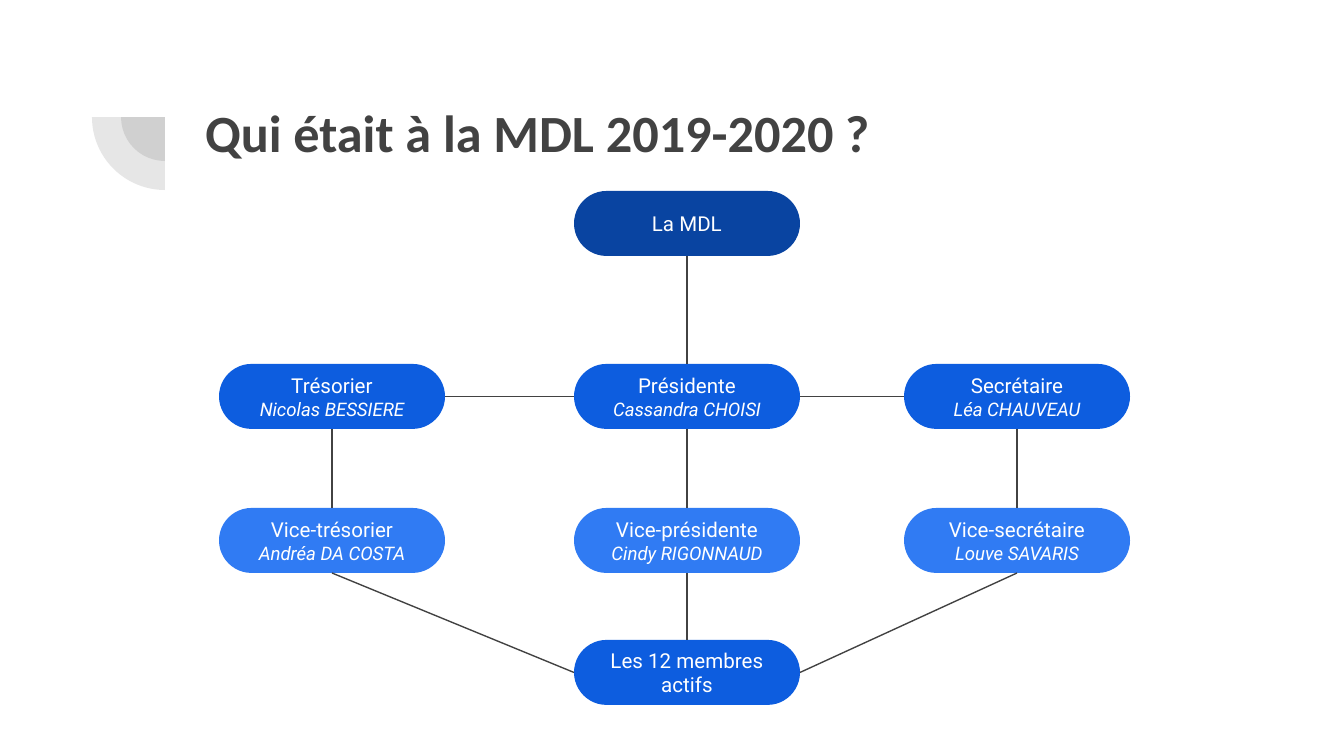
"""Builds the organisation chart slide of the 2019-2020 MDL."""
from typing import NamedTuple

from pptx import Presentation
from pptx.dml.color import RGBColor
from pptx.enum.shapes import MSO_CONNECTOR as Link, MSO_SHAPE as Kind
from pptx.enum.text import MSO_ANCHOR as Anchor, PP_ALIGN as Align
from pptx.oxml.ns import qn
from pptx.util import Emu, Pt
from lxml.etree import SubElement

SCALE = 914400 / 134.4
WIDE, HIGH = 226, 65
LEFT, MID, RIGHT = 219, 574, 904
GREY, WHITE = "424242", "FFFFFF"
DARK, BLUE, LIGHT = "0944A1", "0D5DDF", "307BF3"
TOP, WEST, BASE, EAST = range(4)


class Post(NamedTuple):
    key: str
    x: int
    y: int
    fill: str
    role: str
    name: str = ""


class Tie(NamedTuple):
    start: str
    side: int
    end: str
    into: int


POSTS = [
    Post("mdl", MID, 191, DARK, "La MDL"),
    Post("cash", LEFT, 364, BLUE, "Trésorier", "Nicolas BESSIERE"),
    Post("head", MID, 364, BLUE, "Présidente", "Cassandra CHOISI"),
    Post("pen", RIGHT, 364, BLUE, "Secrétaire", "Léa CHAUVEAU"),
    Post("cash2", LEFT, 508, LIGHT, "Vice-trésorier", "Andréa DA COSTA"),
    Post("head2", MID, 508, LIGHT, "Vice-présidente", "Cindy RIGONNAUD"),
    Post("pen2", RIGHT, 508, LIGHT, "Vice-secrétaire", "Louve SAVARIS"),
    Post("crew", MID, 640, BLUE, "Les 12 membres actifs"),
]

TIES = [
    Tie("mdl", BASE, "head", TOP),
    Tie("head", EAST, "pen", WEST),
    Tie("head", WEST, "cash", EAST),
    Tie("cash", BASE, "cash2", TOP),
    Tie("head", BASE, "head2", TOP),
    Tie("pen", BASE, "pen2", TOP),
    Tie("cash2", BASE, "crew", WEST),
    Tie("head2", BASE, "crew", TOP),
    Tie("pen2", BASE, "crew", EAST),
]


def px(*sizes: int) -> list[Emu]:
    """Turn pixels into EMU."""
    return [Emu(round(size * SCALE)) for size in sizes]


def tint(code: str) -> RGBColor:
    """Turn a hex string into a colour."""
    return RGBColor.from_string(code)


def style(para, size: int, face: str, code: str, bold: bool = False, slant: bool = False) -> None:
    """Format every run of a paragraph."""
    for run in para.runs:
        font = run.font
        font.size, font.name, font.bold, font.italic = Pt(size), face, bold, slant
        font.color.rgb = tint(code)


def inset(frame) -> None:
    """Wrap a text frame and give it equal margins."""
    frame.word_wrap = True
    (frame.margin_left, frame.margin_right,
     frame.margin_top, frame.margin_bottom) = px(13, 13, 13, 13)


def shape(slide, kind: Kind, box: tuple, code: str):
    """Draw a flat shape without outline."""
    item = slide.shapes.add_shape(kind, *px(*box))
    item.shadow.inherit = False
    item.fill.solid()
    item.fill.fore_color.rgb = tint(code)
    item.line.fill.background()
    return item


def pie(slide, radius: int) -> None:
    """Draw a clear quarter disc around the shared corner."""
    box = (165 - radius, 117 - radius, 2 * radius, 2 * radius)
    item = shape(slide, Kind.PIE, box, GREY)
    item.adjustments[0], item.adjustments[1] = 108, 162
    item.rotation = 270
    tone = item.fill._xPr.find(qn("a:solidFill"))[0]
    SubElement(tone, qn("a:alpha"), val="13000")


def title(slide, text: str) -> None:
    """Write the slide title."""
    frame = slide.shapes.add_textbox(*px(192, 87, 1034, 146)).text_frame
    inset(frame)
    frame.text = text
    style(frame.paragraphs[0], 28, "Calibri", GREY, bold=True)


def pill(slide, post: Post):
    """Draw one post with its role and holder."""
    item = shape(slide, Kind.ROUNDED_RECTANGLE, (post.x, post.y, WIDE, HIGH), post.fill)
    item.adjustments[0] = 0.5
    frame = item.text_frame
    inset(frame)
    frame.vertical_anchor = Anchor.MIDDLE
    frame.text = f"{post.role}\n{post.name}" if post.name else post.role
    for row, para in enumerate(frame.paragraphs):
        para.alignment = Align.CENTER
        style(para, 11 - row, "Roboto", WHITE, slant=row == 1)
    return item


def join(slide, tie: Tie, pills: dict) -> None:
    """Draw a line between two posts."""
    line = slide.shapes.add_connector(Link.STRAIGHT, 0, 0, 0, 0)
    line.begin_connect(pills[tie.start], tie.side)
    line.end_connect(pills[tie.end], tie.into)
    line.line.color.rgb = tint(GREY)
    line.line.width = Pt(0.75)
    SubElement(line._element.spPr, qn("a:effectLst"))


def main() -> None:
    """Build and save the slide."""
    deck = Presentation()
    deck.slide_width, deck.slide_height = px(1344, 756)
    slide = deck.slides.add_slide(deck.slide_layouts[6])
    for radius in (44, 73):
        pie(slide, radius)
    title(slide, "Qui était à la MDL 2019-2020 ?")
    pills = {post.key: pill(slide, post) for post in POSTS}
    for tie in TIES:
        join(slide, tie, pills)
    deck.save("out.pptx")


if __name__ == "__main__":
    main()
